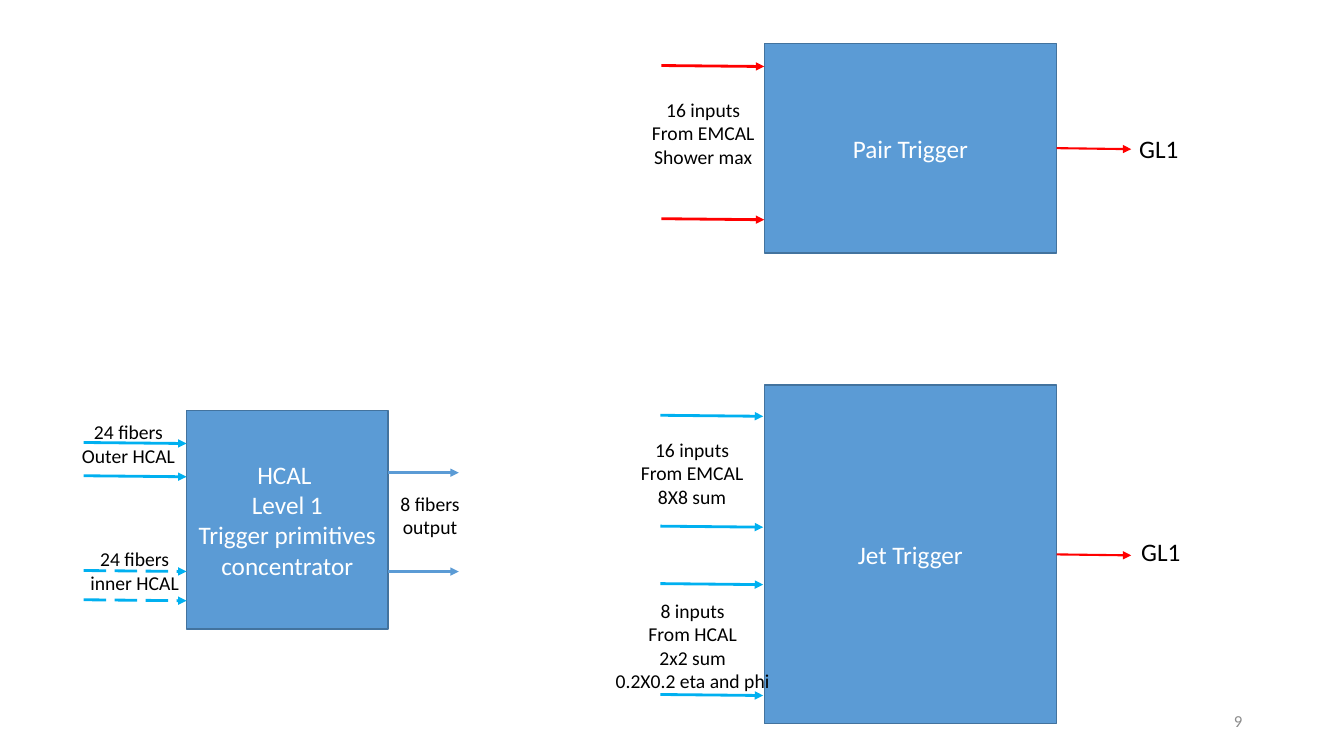
"""Build the slide of calorimeter trigger blocks and their fibre links."""
from lxml.etree import SubElement
from pptx import Presentation
from pptx.dml.color import RGBColor
from pptx.enum.dml import MSO_LINE
from pptx.enum.shapes import MSO_CONNECTOR, MSO_SHAPE
from pptx.enum.text import MSO_ANCHOR, MSO_AUTO_SIZE, PP_ALIGN
from pptx.oxml.ns import qn
from pptx.util import Inches, Pt

CELL = Inches(0.1)
BLUE, SKY, RED = "5B9BD5", "00B0F0", "FF0000"


def color(hex_string):
    return RGBColor.from_string(hex_string)


def write(frame, lines, size, ink, align):
    frame.text = "\n".join(lines)
    for paragraph in frame.paragraphs:
        paragraph.alignment = align
        paragraph.font.name = "Calibri"
        paragraph.font.size = Pt(size)
        paragraph.font.color.rgb = color(ink)


deck = Presentation()
deck.slide_width, deck.slide_height = Inches(13.33), Inches(7.5)
slide = deck.slides.add_slide(deck.slide_layouts[6])

blocks = {}
for block_name, place, lines in [
    ("pair", (75.8, 4.3, 29, 20.8), ["Pair Trigger"]),
    ("hcal", (18.5, 40.7, 20, 21.7),
     ["HCAL ", "Level 1", "Trigger primitives concentrator"]),
    ("jet", (75.8, 38.2, 29, 33.6), ["Jet Trigger"]),
]:
    block = slide.shapes.add_shape(
        MSO_SHAPE.RECTANGLE, *[round(cells * CELL) for cells in place])
    block.shadow.inherit = False
    block.fill.solid()
    block.fill.fore_color.rgb = color(BLUE)
    block.line.color.rgb = color("43739E")
    block.line.width = Pt(1)
    block.text_frame.vertical_anchor = MSO_ANCHOR.MIDDLE
    write(block.text_frame, lines, 18, "FFFFFF", PP_ALIGN.CENTER)
    blocks[block_name] = block

for left, length, rows, drop, ink, weight, dash, source in [
    (65.6, 10.2, (6.5, 21.7), 0.1, RED, 2, None, None),
    (8.3, 10.2, (43.9, 47.2), 0.1, SKY, 2, None, None),
    (8.3, 10.2, (56.6, 59.5), 0.1, SKY, 2, MSO_LINE.LONG_DASH, None),
    (38.5, 7, (46.9, 56.7), 0, BLUE, 2, None, None),
    (65.5, 10.2, (41.2, 52.2, 57.9, 68.9), 0.1, SKY, 2, None, None),
    (104.8, 7.4, (14.7,), 0.1, RED, 1.5, None, "pair"),
    (104.8, 7.4, (54.9,), 0.2, RED, 1.5, None, "jet"),
]:
    for row in rows:
        ends = (left, row, left + length, row + drop)
        link = slide.shapes.add_connector(
            MSO_CONNECTOR.STRAIGHT, *[round(cells * CELL) for cells in ends])
        if source:
            link.begin_connect(blocks[source], 3)
        link.line.color.rgb = color(ink)
        link.line.width = Pt(weight)
        if dash:
            link.line.dash_style = dash
        SubElement(link.line._get_or_add_ln(), qn("a:tailEnd"), type="triangle")
        SubElement(link._element.spPr, qn("a:effectLst"))

for place, lines, size in [
    ((63.6, 9.2, 12.3, 8.1), ["16 inputs", "From EMCAL", "Shower max"], 14),
    ((7.1, 41.2, 11.3, 5.7), ["24 fibers", "Outer HCAL"], 14),
    ((7.9, 53.8, 10.9, 5.7), ["24 fibers", "inner HCAL"], 14),
    ((38.7, 48.3, 7.9, 5.7), ["8 fibers", "output"], 14),
    ((62.5, 42.9, 12.3, 8.1), ["16 inputs", "From EMCAL", "8X8 sum"], 14),
    ((60, 58.9, 17.4, 10.4),
     ["8 inputs", "From HCAL", "2x2 sum", "0.2X0.2 eta and phi"], 14),
    ((112, 12.7, 6, 4), ["GL1"], 18),
    ((112.2, 52.7, 6, 4), ["GL1"], 18),
]:
    label = slide.shapes.add_textbox(*[round(cells * CELL) for cells in place])
    label.text_frame.word_wrap = False
    label.text_frame.auto_size = MSO_AUTO_SIZE.SHAPE_TO_FIT_TEXT
    align = PP_ALIGN.LEFT if size == 18 else PP_ALIGN.CENTER
    write(label.text_frame, lines, size, "000000", align)

page_place = (94.2, 69.5, 30, 4)
page_number = slide.shapes.add_textbox(*[round(cells * CELL) for cells in page_place])
page_number.text_frame.word_wrap = True
page_number.text_frame.vertical_anchor = MSO_ANCHOR.MIDDLE
write(page_number.text_frame, ["9"], 12, "8C8C8C", PP_ALIGN.RIGHT)

deck.save("out.pptx")
